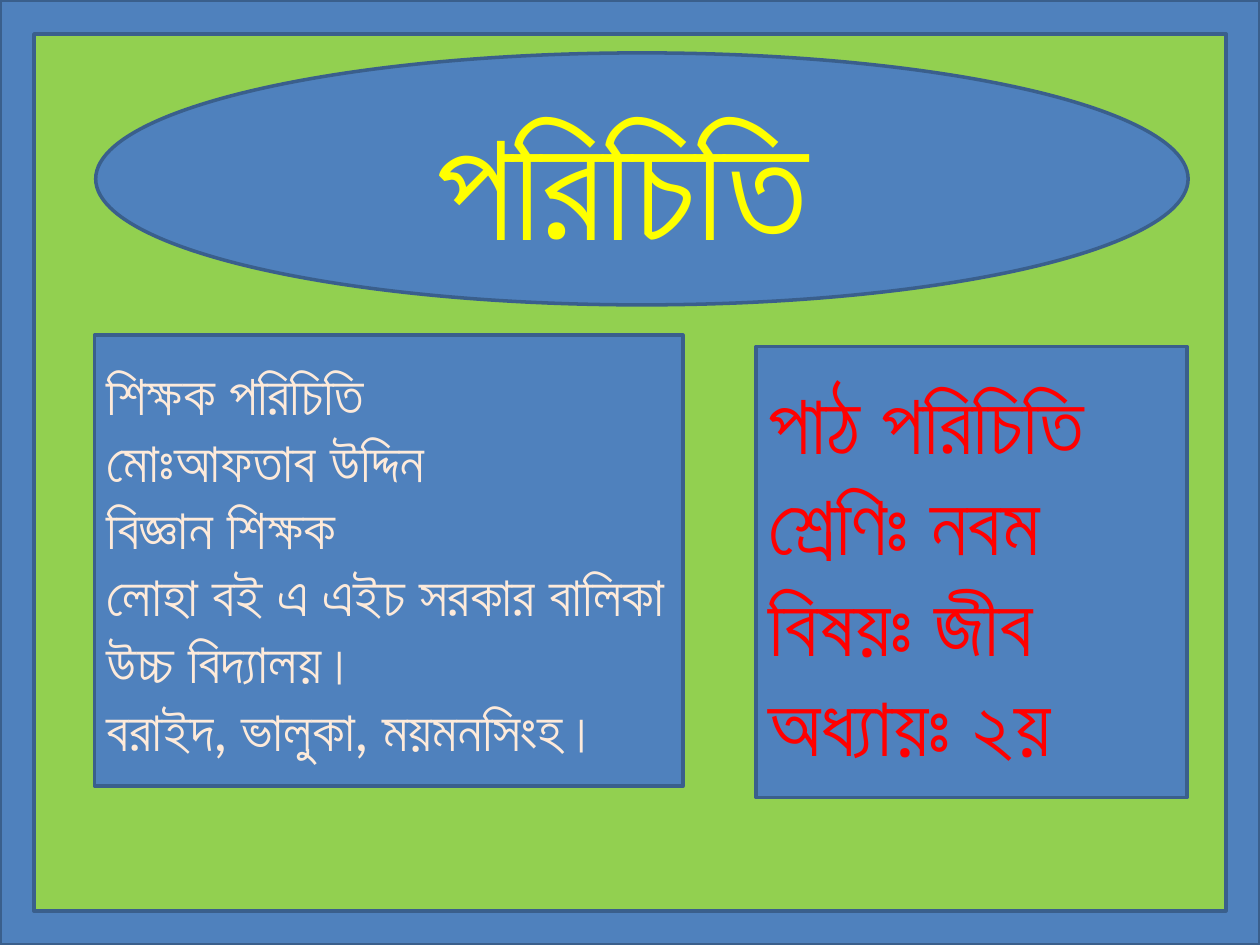
from lxml.etree import SubElement
from pptx import Presentation
from pptx.dml.color import RGBColor
from pptx.enum.shapes import MSO_SHAPE
from pptx.enum.text import MSO_ANCHOR, MSO_AUTO_SIZE, PP_ALIGN
from pptx.oxml.ns import qn
from pptx.util import Inches, Pt

rgb = RGBColor.from_string


def add_panel(kind, box):
    sp = s.shapes.add_shape(kind, *map(Inches, box))
    sp.shadow.inherit = False
    sp.fill.solid()
    sp.fill.fore_color.rgb = rgb("4F81BD")
    sp.line.color.rgb = rgb("3A5F8C")
    sp.line.width = Pt(2)
    return sp


def write(sp, lines, size, color, align):
    tf = sp.text_frame
    for name, value in {"word_wrap": True, "auto_size": MSO_AUTO_SIZE.NONE,
                        "vertical_anchor": MSO_ANCHOR.MIDDLE}.items():
        setattr(tf, name, value)
    for i, line in enumerate(lines):
        p = tf.paragraphs[0] if i == 0 else tf.add_paragraph()
        p.alignment = align
        r = p.add_run()
        r.text = line
        for name, value in {"size": Pt(size), "name": "Lato"}.items():
            setattr(r.font, name, value)
        r.font.color.rgb = rgb(color)
        # Bengali takes its font from the complex-script setting
        SubElement(r.font._element, qn("a:cs"), typeface="Lato")


prs = Presentation()
prs.slide_width, prs.slide_height = Inches(10), Inches(7.5)
s = prs.slides.add_slide(prs.slide_layouts[5])
s.background.fill.solid()
s.background.fill.fore_color.rgb = rgb("92D050")

# Border frame
frame = add_panel(MSO_SHAPE.FRAME, (0, 0, 10, 7.5))
frame.adjustments[0] = 0.036

# Title on its ellipse
title_box = (0.76, 0.42, 8.67, 2)
add_panel(MSO_SHAPE.OVAL, title_box)
title = s.shapes.title
for name, value in zip(("left", "top", "width", "height"), title_box):
    setattr(title, name, Inches(value))
write(title, ["পরিচিতি "], 88, "FFFF00", PP_ALIGN.CENTER)
s.shapes._spTree.append(title._element)  # bring in front of the ellipse

# Teacher and lesson panels
panels = [
    ((0.75, 2.66, 4.67, 3.58), 32, "FDEADA",
     ["শিক্ষক পরিচিতি", "মোঃআফতাব উদ্দিন", "বিজ্ঞান শিক্ষক",
      "লোহা বই এ এইচ সরকার বালিকা উচ্চ বিদ্যালয়।",
      "বরাইদ, ভালুকা, ময়মনসিংহ।"]),
    ((6, 2.75, 3.42, 3.58), 48, "FF0000",
     ["পাঠ পরিচিতি", "শ্রেণিঃ নবম", "বিষয়ঃ জীব", "অধ্যায়ঃ ২য়"]),
]
for box, size, color, lines in panels:
    write(add_panel(MSO_SHAPE.RECTANGLE, box), lines, size, color, PP_ALIGN.LEFT)

prs.save("out.pptx")
